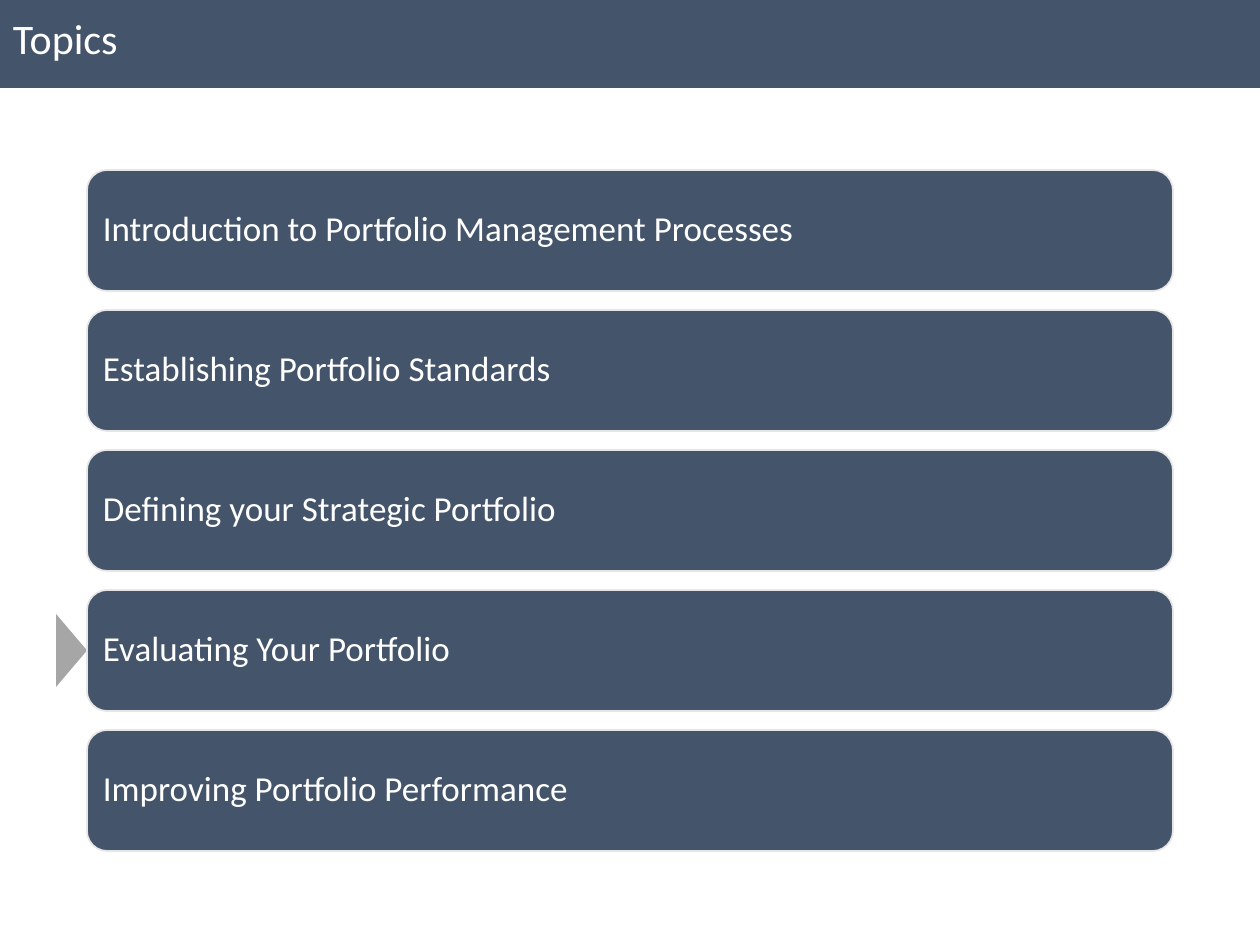
from pptx import Presentation
from pptx.dml.color import RGBColor
from pptx.enum.shapes import MSO_SHAPE
from pptx.enum.text import MSO_ANCHOR, PP_ALIGN
from pptx.util import Emu, Pt

RECT, ROUNDED, TRIANGLE = (
    MSO_SHAPE.RECTANGLE, MSO_SHAPE.ROUNDED_RECTANGLE, MSO_SHAPE.ISOSCELES_TRIANGLE)
TOP, MIDDLE, LEFT = MSO_ANCHOR.TOP, MSO_ANCHOR.MIDDLE, PP_ALIGN.LEFT

TITLE = "Topics"
TOPICS = [
    "Introduction to Portfolio Management Processes",
    "Establishing Portfolio Standards",
    "Defining your Strategic Portfolio",
    "Evaluating Your Portfolio",
    "Improving Portfolio Performance",
]
CURRENT_TOPIC = 3

SLATE, PALE, GREY, WHITE = "44546A", "E7E6E6", "A6A6A6", "FFFFFF"
FONT = "Calibri"

SLIDE_W, SLIDE_H, HEADER_H = 1260, 945, 88
BAR_X, BAR_Y, BAR_W, BAR_H, BAR_STEP = 87, 170, 1086, 121, 140
MARKER_W, MARKER_H = 73, 31


def px(length):
    return Emu(round(length * 914400 / 126))


def color(hex_code):
    return RGBColor.from_string(hex_code)


def add_block(slide, kind, x, y, w, h, fill, line=None):
    block = slide.shapes.add_shape(kind, px(x), px(y), px(w), px(h))
    block.shadow.inherit = False
    block.fill.solid()
    block.fill.fore_color.rgb = color(fill)
    if line:
        block.line.color.rgb = color(line)
        block.line.width = Pt(1)
    else:
        block.line.fill.background()
    return block


def write(block, text, size, inset, anchor):
    frame = block.text_frame
    frame.word_wrap = True
    frame.vertical_anchor = anchor
    frame.margin_left = frame.margin_right = px(inset)
    frame.margin_top = frame.margin_bottom = px(inset)
    paragraph = frame.paragraphs[0]
    paragraph.alignment = LEFT
    run = paragraph.add_run()
    run.text = text
    run.font.size = Pt(size)
    run.font.name = FONT
    run.font.color.rgb = color(WHITE)
    return paragraph


def main():
    prs = Presentation()
    prs.slide_width, prs.slide_height = px(SLIDE_W), px(SLIDE_H)
    slide = prs.slides.add_slide(prs.slide_layouts[6])

    header = add_block(slide, RECT, 0, 0, SLIDE_W, HEADER_H, SLATE)
    write(header, TITLE, 24, 13, TOP)

    # The marker is turned about its centre, so its height becomes its width.
    marker_x = BAR_X - (MARKER_W + MARKER_H) / 2
    marker_y = BAR_Y + CURRENT_TOPIC * BAR_STEP + (BAR_H - MARKER_H) / 2
    marker = add_block(slide, TRIANGLE, marker_x, marker_y, MARKER_W, MARKER_H, GREY)
    marker.rotation = 90

    for i, topic in enumerate(TOPICS):
        bar = add_block(slide, ROUNDED, BAR_X, BAR_Y + i * BAR_STEP,
                        BAR_W, BAR_H, SLATE, PALE)
        write(bar, topic, 20, 10, MIDDLE).line_spacing = 0.9

    prs.save("out.pptx")


if __name__ == "__main__":
    main()
